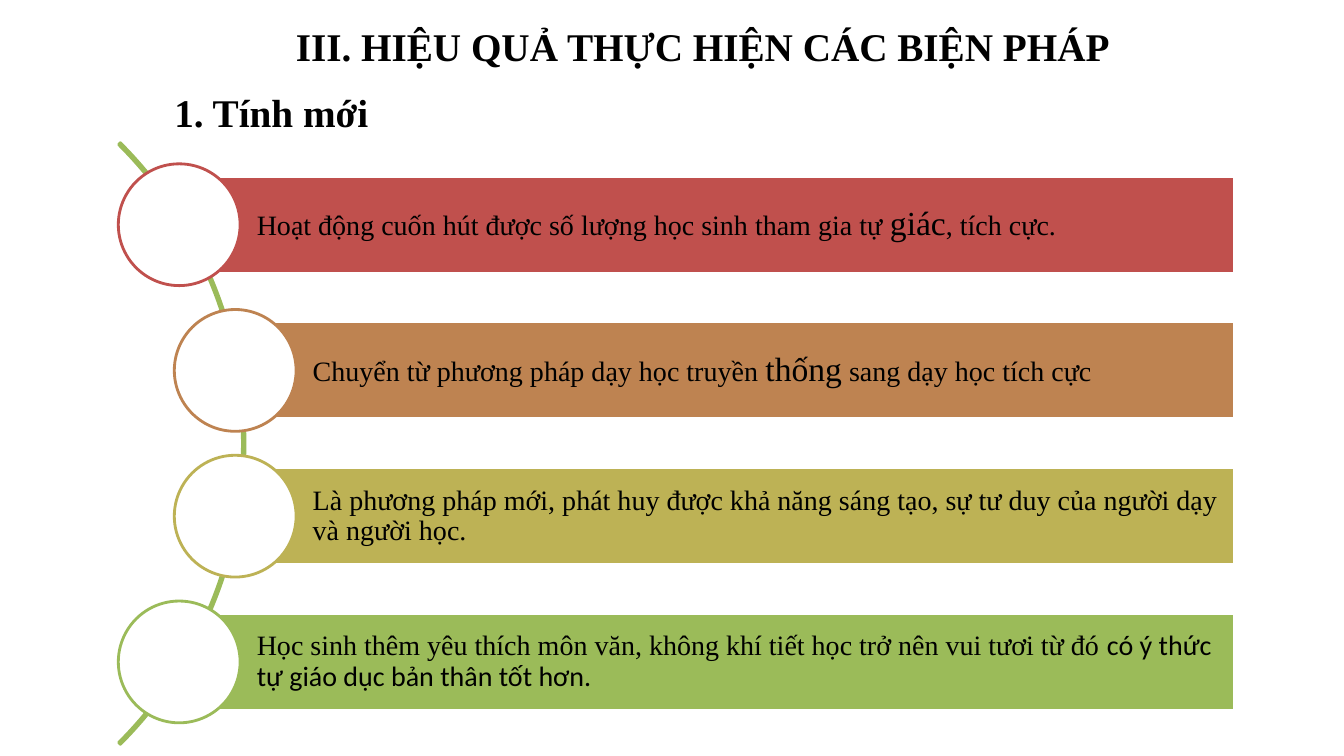
from dataclasses import dataclass

from pptx import Presentation
from pptx.dml.color import RGBColor
from pptx.enum.shapes import MSO_SHAPE as Preset
from pptx.enum.text import MSO_ANCHOR as Anchor, MSO_AUTO_SIZE as AutoSize, PP_ALIGN as Align
from pptx.shapes.autoshape import Shape
from pptx.slide import Slide
from pptx.util import Pt

SERIF, SANS = "Times New Roman", "Calibri"
BLACK, WHITE, GREEN = "000000", "FFFFFF", "9BBB59"

FIRST_TOP, PITCH, BAR_HEIGHT, BAR_RIGHT = 126, 104.1, 69, 881.6
OUTER_LEFT, INNER_LEFT = 128, 168
CIRCLE_SIZE = 87


@dataclass(frozen=True)
class Piece:
    text: str
    size: float = 20
    font: str = SERIF


@dataclass(frozen=True)
class Benefit:
    left: float
    color: str
    pieces: tuple[Piece, ...]


@dataclass(frozen=True)
class Heading:
    text: str
    left: float
    top: float
    width: float
    indent: float = 0


BENEFITS = (
    Benefit(OUTER_LEFT, "C0504D", (
        Piece("Hoạt động cuốn hút được số lượng học sinh tham gia tự "),
        Piece("giác", size=24),
        Piece(", tích cực."),
    )),
    Benefit(INNER_LEFT, "BE8351", (
        Piece("Chuyển từ phương pháp dạy học truyền "),
        Piece("thống", size=24),
        Piece(" sang dạy học tích cực"),
    )),
    Benefit(INNER_LEFT, "BDB255", (
        Piece("Là phương pháp mới, phát huy được khả năng sáng tạo, "
              "sự tư duy của người dạy và người học."),
    )),
    Benefit(OUTER_LEFT, GREEN, (
        Piece("Học sinh thêm yêu thích môn văn, không khí tiết học trở nên vui tươi từ đó "),
        Piece("có ý thức tự giáo dục bản thân tốt hơn.", font=SANS),
    )),
)

HEADINGS = (
    Heading("1. Tính mới", 117.4, 54.7, 669),
    Heading("III. HIỆU QUẢ THỰC HIỆN CÁC BIỆN PHÁP", 120.2, 7.2, 720, indent=84),
)


def rgb(color: str) -> RGBColor:
    return RGBColor.from_string(color)


def add_outlined(slide: Slide, preset: Preset, left: float, top: float, width: float,
                 height: float, fill: str | None, line: str) -> Shape:
    """Add a preset shape with a 2 pt outline; no fill when fill is None."""
    shape = slide.shapes.add_shape(preset, Pt(left), Pt(top), Pt(width), Pt(height))
    shape.shadow.inherit = False
    if fill is None:
        shape.fill.background()
    else:
        shape.fill.solid()
        shape.fill.fore_color.rgb = rgb(fill)
    shape.line.color.rgb = rgb(line)
    shape.line.width = Pt(2)
    return shape


def add_arc(slide: Slide) -> None:
    arc = add_outlined(slide, Preset.BLOCK_ARC, -432.7, 13, 607.7, 607.7, None, GREEN)
    for index, value in enumerate((189, 27, 0.003)):
        arc.adjustments[index] = value


def add_benefit(slide: Slide, benefit: Benefit, top: float) -> None:
    bar = add_outlined(slide, Preset.RECTANGLE, benefit.left, top,
                       BAR_RIGHT - benefit.left, BAR_HEIGHT, benefit.color, WHITE)
    frame = bar.text_frame
    frame.word_wrap = True
    frame.vertical_anchor = Anchor.MIDDLE
    frame.margin_left = Pt(55.4)
    frame.margin_top = frame.margin_right = frame.margin_bottom = Pt(4.3)
    paragraph = frame.paragraphs[0]
    paragraph.alignment = Align.LEFT
    paragraph.line_spacing = 0.9
    paragraph.font.color.rgb = rgb(BLACK)
    for piece in benefit.pieces:
        run = paragraph.add_run()
        run.text = piece.text
        run.font.name = piece.font
        run.font.size = Pt(piece.size)

    radius = CIRCLE_SIZE / 2
    add_outlined(slide, Preset.OVAL, benefit.left - radius, top + BAR_HEIGHT / 2 - radius,
                 CIRCLE_SIZE, CIRCLE_SIZE, WHITE, benefit.color)


def add_heading(slide: Slide, heading: Heading) -> None:
    box = slide.shapes.add_textbox(Pt(heading.left), Pt(heading.top), Pt(heading.width), Pt(43))
    frame = box.text_frame
    frame.word_wrap = True
    frame.auto_size = AutoSize.SHAPE_TO_FIT_TEXT
    frame.margin_left = Pt(7.2 + heading.indent)
    paragraph = frame.paragraphs[0]
    paragraph.text = heading.text
    paragraph.alignment = Align.JUSTIFY
    paragraph.line_spacing = 1.15
    paragraph.space_after = Pt(8)
    paragraph.font.name = SERIF
    paragraph.font.size = Pt(28)
    paragraph.font.bold = True
    paragraph.font.color.rgb = rgb(BLACK)


def main() -> None:
    deck = Presentation()
    deck.slide_width, deck.slide_height = Pt(960), Pt(540)
    slide = deck.slides.add_slide(deck.slide_layouts[6])
    add_arc(slide)
    for row, benefit in enumerate(BENEFITS):
        add_benefit(slide, benefit, FIRST_TOP + row * PITCH)
    for heading in HEADINGS:
        add_heading(slide, heading)
    deck.save("out.pptx")


if __name__ == "__main__":
    main()
